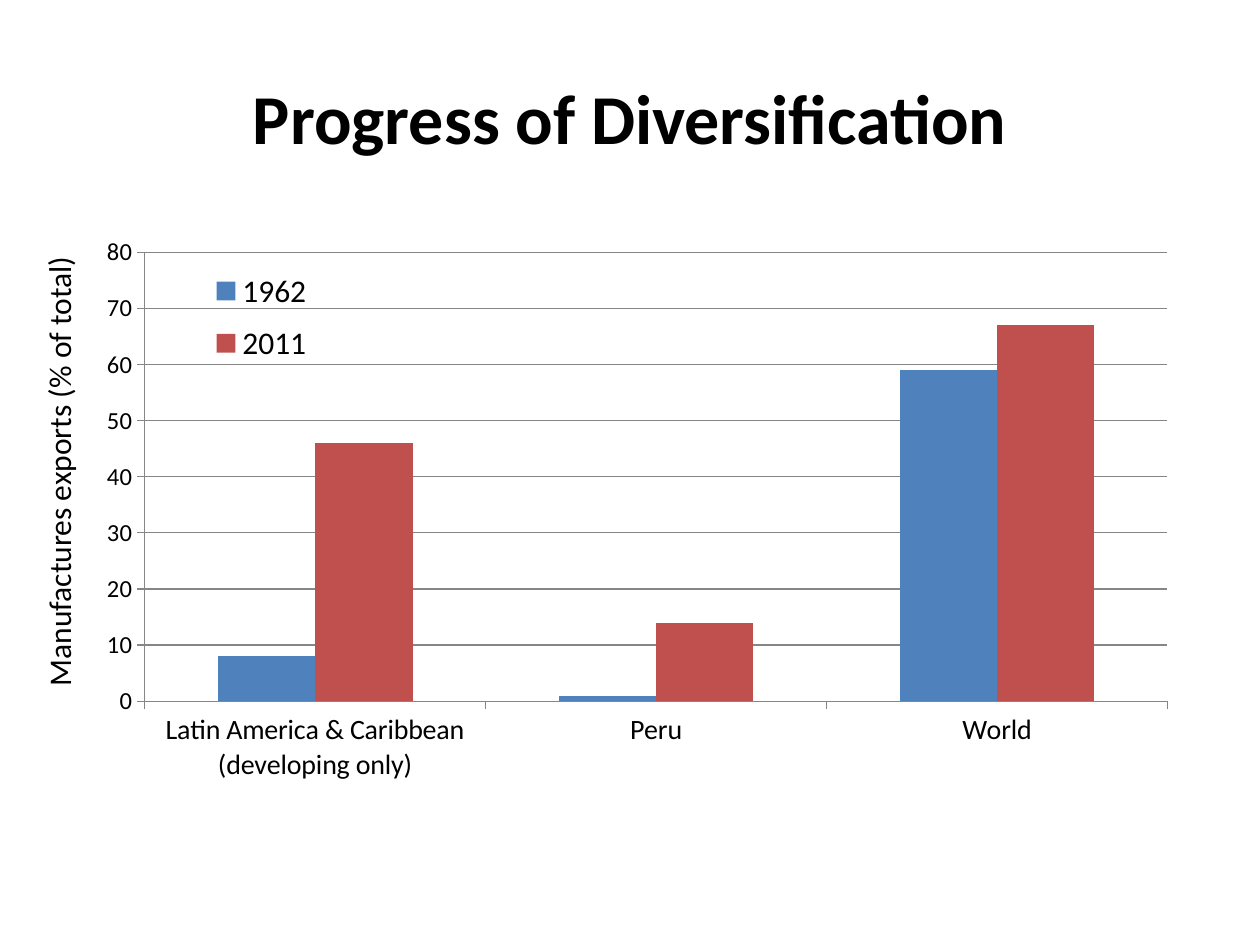
from typing import Any, NamedTuple

import lxml.etree
import pptx
import pptx.chart.data
import pptx.dml.color
import pptx.enum.chart
import pptx.enum.text
import pptx.oxml.ns
import pptx.util
from pptx.util import Inches

FONT = "Calibri"
BLACK = "000000"
GRID = "868686"


class Label(NamedTuple):
    text: str
    at: tuple[float, float, float, float]
    align: Any
    anchor: Any
    size: int
    bold: bool = False
    rotation: int = 0
    wrap: bool = True


class Series(NamedTuple):
    name: str
    values: tuple[int, ...]
    color: str


class Frame(NamedTuple):
    x: float
    y: float
    w: float
    h: float


ALIGN = pptx.enum.text.PP_ALIGN
ANCHOR = pptx.enum.text.MSO_ANCHOR
LABELS = (
    Label("Progress of Diversification", (0.5, 0.3, 9, 1.25),
          ALIGN.CENTER, ANCHOR.MIDDLE, 40, bold=True),
    Label("Manufactures exports (% of total)", (-1.36, 3.52, 3.65, 0.4),
          ALIGN.LEFT, ANCHOR.TOP, 18, rotation=270, wrap=False),
)
CATEGORIES = ("Latin America & Caribbean (developing only)", "Peru", "World")
SERIES = (
    Series("1962", (8, 1, 59), "4F81BD"),
    Series("2011", (46, 14, 67), "C0504D"),
)


def rgb(color: str) -> pptx.dml.color.RGBColor:
    return pptx.dml.color.RGBColor.from_string(color)


def style_font(font: Any, size: int, bold: bool = False) -> None:
    formats = {"name": FONT, "size": pptx.util.Pt(size), "bold": bold}
    for key, value in formats.items():
        setattr(font, key, value)
    font.color.rgb = rgb(BLACK)


def style_line(line: Any) -> None:
    line.color.rgb = rgb(GRID)
    line.width = pptx.util.Pt(0.75)


def add_label(page: Any, label: Label) -> None:
    box = page.shapes.add_textbox(*map(Inches, label.at))
    box.rotation = label.rotation
    frame = box.text_frame
    frame.word_wrap = label.wrap
    frame.vertical_anchor = label.anchor
    para = frame.paragraphs[0]
    para.alignment = label.align
    span = para.add_run()
    span.text = label.text
    style_font(span.font, label.size, label.bold)


def make_layout(frame: Frame, inner: bool = False) -> Any:
    """Build a manual chart layout from fractions of the chart area."""
    qn = pptx.oxml.ns.qn
    layout = lxml.etree.Element(qn("c:layout"))
    manual = lxml.etree.SubElement(layout, qn("c:manualLayout"))
    settings = {"layoutTarget": "inner"} if inner else {}
    settings |= {"xMode": "edge", "yMode": "edge"}
    settings |= {key: str(value) for key, value in frame._asdict().items()}
    for key, value in settings.items():
        lxml.etree.SubElement(manual, qn(f"c:{key}")).set("val", value)
    return layout


def add_exports_chart(page: Any) -> None:
    data = pptx.chart.data.CategoryChartData()
    data.categories = CATEGORIES
    for series in SERIES:
        data.add_series(series.name, series.values)
    chart = page.shapes.add_chart(
        pptx.enum.chart.XL_CHART_TYPE.COLUMN_CLUSTERED,
        Inches(0.5), Inches(1.75), Inches(9), Inches(4.95), data).chart
    chart.has_title = False
    style_font(chart.font, 10)

    # Columns
    plot = chart.plots[0]
    plot.vary_by_categories = False
    plot.gap_width = 150
    plot.overlap = 0
    for drawn, series in zip(plot.series, SERIES):
        drawn.format.fill.solid()
        drawn.format.fill.fore_color.rgb = rgb(series.color)

    # Axes and gridlines
    for axis, size in ((chart.category_axis, 16), (chart.value_axis, 14)):
        style_font(axis.tick_labels.font, size)
        axis.major_tick_mark = pptx.enum.chart.XL_TICK_MARK.OUTSIDE
        style_line(axis.format.line)
    values = chart.value_axis
    scale = {"minimum_scale": 0, "maximum_scale": 80, "major_unit": 10,
             "has_major_gridlines": True}
    for key, value in scale.items():
        setattr(values, key, value)
    style_line(values.major_gridlines.format.line)

    # Legend over the upper left of the plot
    chart.has_legend = True
    chart.legend.position = pptx.enum.chart.XL_LEGEND_POSITION.RIGHT
    chart.legend.include_in_layout = False
    style_font(chart.legend.font, 18)

    # Fixed places for the plot and the legend
    qn = pptx.oxml.ns.qn
    root = chart.element
    area = root.find(f".//{qn('c:plotArea')}")
    position = root.find(f".//{qn('c:legendPos')}")
    for parent in (area, position.getparent()):
        for old in parent.findall(qn("c:layout")):
            parent.remove(old)
    area.insert(0, make_layout(Frame(0.072, 0.051, 0.902, 0.72), inner=True))
    position.addnext(make_layout(Frame(0.1, 0.06, 0.15, 0.19)))


def main() -> None:
    deck = pptx.Presentation()
    deck.slide_width, deck.slide_height = Inches(10), Inches(7.5)
    page = deck.slides.add_slide(deck.slide_layouts[6])
    add_exports_chart(page)
    for label in LABELS:
        add_label(page, label)
    deck.save("out.pptx")


if __name__ == "__main__":
    main()
